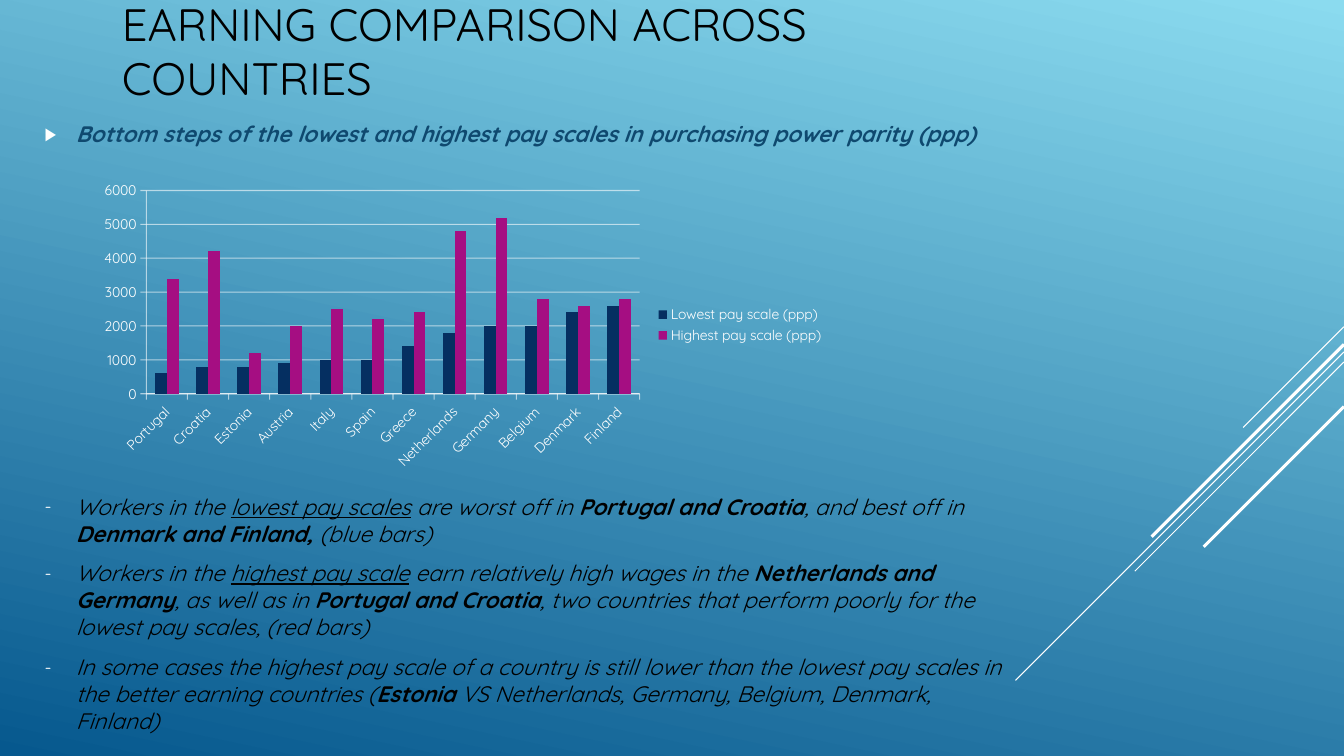
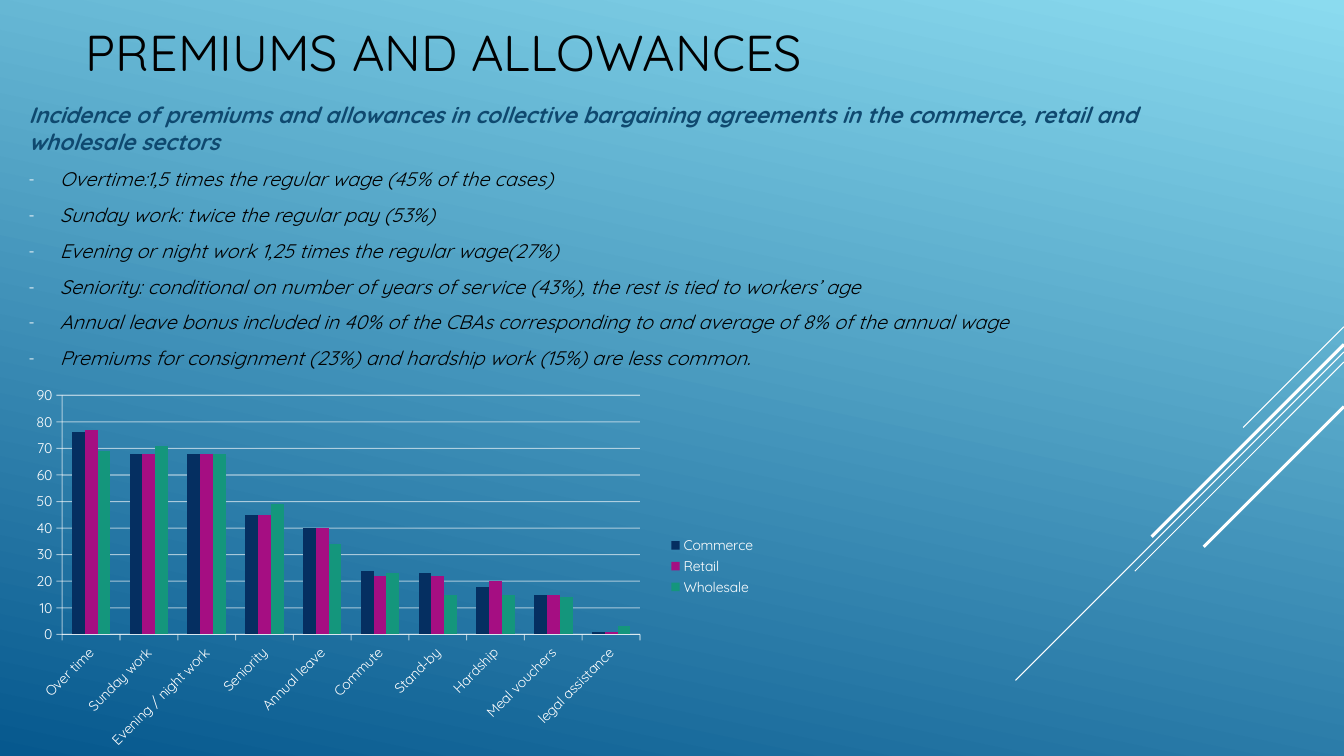
from lxml import etree
from pptx import Presentation
from pptx import util as u
from pptx.chart import data
from pptx.dml import color
from pptx.enum import chart as charts, shapes, text
from pptx.oxml.ns import qn

FONT = "Quicksand"
WHITE, BLACK, HEADING = "FFFFFF", "000000", "0F496F"
SERIES_COLORS = ["052F61", "A50E82", "14967C"]
COLUMNS, ROWS = 160, 90
CELL = u.Inches(1 / 12)
STRIPES = [(38.9, 12, 0.75), (41.9, 39.1, 0.75), (43.1, 24.9, 0.75),
           (41, 22.9, 2.25), (48.4, 16.7, 2.25)]


def rgb(value):
    return color.RGBColor.from_string(value)


def cells(*counts):
    return [round(count * CELL) for count in counts]


def child(parent, tag, **attributes):
    return etree.SubElement(parent, qn(tag), attributes)


class Deck:
    """Holds the shared style and the current slide; lengths are cells of a 160 by 90 grid."""

    def __init__(self):
        self.prs = Presentation()
        self.prs.slide_width, self.prs.slide_height = cells(COLUMNS, ROWS)
        fill = self.prs.slide_master.background.fill
        fill.gradient()
        fill.gradient_angle = 360 - 102
        for stop, position, shade in zip(fill.gradient_stops, (0, 1), ("8BDBEF", "06588E")):
            stop.position = position
            stop.color.rgb = rgb(shade)

    def new_slide(self):
        self.slide = self.prs.slides.add_slide(self.prs.slide_layouts[1])
        for row, length, width in STRIPES:
            self.stripe(row, length, width)

    def stripe(self, row, length, width):
        ends = cells(COLUMNS, row, COLUMNS - length, row + length)
        line = self.slide.shapes.add_connector(shapes.MSO_CONNECTOR.STRAIGHT, *ends)
        line.line.color.rgb = rgb(WHITE)
        line.line.width = u.Pt(width)
        child(line._element.spPr, "a:effectLst")

    def place(self, holder, box, anchor):
        holder.left, holder.top, holder.width, holder.height = cells(*box)
        frame = holder.text_frame
        frame.word_wrap = True
        frame.auto_size = text.MSO_AUTO_SIZE.NONE
        frame.vertical_anchor = anchor
        return frame

    def style(self, font, size, shade, bold=False, italic=False):
        font.name, font.size = FONT, u.Pt(size)
        font.color.rgb = rgb(shade)
        font.bold, font.italic = bold, italic

    def title(self, wording, box, size, anchor):
        frame = self.place(self.slide.shapes.title, box, anchor)
        frame.text = wording
        heading = frame.paragraphs[0]
        heading.alignment = text.PP_ALIGN.LEFT
        self.style(heading.runs[0].font, size, BLACK)

    def body(self, heading, points, box, size, heading_bullet=None, gap=None):
        frame = self.place(self.slide.placeholders[1], box, text.MSO_ANCHOR.TOP)
        frame.text = heading
        first = frame.paragraphs[0]
        self.style(first.runs[0].font, 16, HEADING, True, True)
        self.bullet(first, heading_bullet, 0)
        for index, point in enumerate(points):
            paragraph = frame.add_paragraph()
            self.emphasise(paragraph, point, size)
            before = gap if gap and index == 0 else 0.2 * size
            self.bullet(paragraph, "-", before)

    def emphasise(self, paragraph, marked, size):
        """Text between asterisks is bold, or underlined if it opens with an underscore."""
        for index, piece in enumerate(marked.split("*")):
            underlined = piece.startswith("_")
            run = paragraph.add_run()
            run.text = piece.lstrip("_")
            self.style(run.font, size, BLACK, index % 2 == 1 and not underlined, True)
            run.font.underline = underlined

    def bullet(self, paragraph, mark, before):
        paragraph.alignment = text.PP_ALIGN.LEFT
        paragraph.space_before, paragraph.space_after = u.Pt(before), u.Pt(6)
        props = paragraph._p.get_or_add_pPr()
        indent = u.Inches(0.31) if mark else 0
        props.set("marL", str(indent))
        props.set("indent", str(-indent))
        if not mark:
            child(props, "a:buNone")
            return
        child(child(props, "a:buClr"), "a:srgbClr", val=WHITE)
        child(props, "a:buSzPct", val="80000")
        child(props, "a:buFont", typeface=FONT)
        child(props, "a:buChar", char=mark)

    def columns(self, categories, series, box, plot_area, top, step):
        numbers = data.CategoryChartData(number_format="General")
        numbers.categories = categories
        for name, values in series.items():
            numbers.add_series(name, values)
        chart = self.slide.shapes.add_chart(
            charts.XL_CHART_TYPE.COLUMN_CLUSTERED, *cells(*box), numbers).chart
        chart.has_title = False
        self.style(chart.font, 10, WHITE)
        chart.has_legend = True
        chart.legend.position = charts.XL_LEGEND_POSITION.RIGHT
        chart.legend.include_in_layout = False
        self.style(chart.legend.font, 10, WHITE)
        plot = chart.plots[0]
        plot.gap_width, plot.overlap, plot.vary_by_categories = 150, 0, False
        for bars, shade in zip(plot.series, SERIES_COLORS):
            bars.format.fill.solid()
            bars.format.fill.fore_color.rgb = rgb(shade)
        self.axes(chart, top, step)
        self.plot_layout(chart, plot_area)

    def axes(self, chart, top, step):
        names, scale = chart.category_axis, chart.value_axis
        scale.minimum_scale, scale.maximum_scale, scale.major_unit = 0, top, step
        scale.has_major_gridlines = True
        for axis in (names, scale):
            axis.major_tick_mark = charts.XL_TICK_MARK.OUTSIDE
            axis.minor_tick_mark = charts.XL_TICK_MARK.NONE
            self.style(axis.tick_labels.font, 10, WHITE)
        for part in (names, scale, scale.major_gridlines):
            part.format.line.color.rgb = rgb(WHITE)
            part.format.line.width = u.Pt(0.75)
        for line in chart._chartSpace.iter(qn("a:ln")):
            for shade in line.iter(qn("a:srgbClr")):
                child(shade, "a:alpha", val="60000")
        labels = names._element.find(qn("c:txPr"))
        labels.find(qn("a:bodyPr")).set("rot", str(-45 * 60000))

    def plot_layout(self, chart, plot_area):
        area = next(chart._chartSpace.iter(qn("c:plotArea")))
        for old in area.findall(qn("c:layout")):
            area.remove(old)
        layout = child(area, "c:layout")
        area.insert(0, layout)
        manual = child(layout, "c:manualLayout")
        child(manual, "c:layoutTarget", val="inner")
        for side in "xy":
            child(manual, f"c:{side}Mode", val="edge")
        for side, share in zip("xywh", plot_area):
            child(manual, f"c:{side}", val=str(share))


def earnings(deck):
    deck.new_slide()
    deck.title("EARNING COMPARISON ACROSS COUNTRIES", (13.3, 1.3, 112, 9.4), 32.4,
               text.MSO_ANCHOR.MIDDLE)
    deck.body(
        "Bottom steps of the lowest and highest pay scales in purchasing power parity (ppp)",
        ["Workers in the *_lowest pay scales* are worst off in *Portugal and Croatia*, "
         "and best off in *Denmark and Finland, *(blue bars)",
         "Workers in the *_highest pay scale* earn relatively high wages in the "
         "*Netherlands and Germany*, as well as in *Portugal and Croatia*, two countries "
         "that perform poorly for the lowest pay scales, (red bars)",
         "In some cases the highest pay scale of a country is still lower than the lowest "
         "pay scales in the better earning countries (*Estonia* VS Netherlands, Germany, "
         "Belgium, Denmark, Finland)"],
        (4.1, 13.7, 116.9, 73.2), 16, heading_bullet="▶", gap=241)
    deck.columns(
        ["Portugal", "Croatia", "Estonia", "Austria", "Italy", "Spain", "Greece",
         "Netherlands", "Germany", "Belgium", "Denmark", "Finland"],
        {"Lowest pay scale (ppp)": [600, 800, 800, 900, 1000, 1000, 1400, 1800, 2000,
                                    2000, 2400, 2600],
         "Highest pay scale (ppp)": [3400, 4200, 1200, 2000, 2500, 2200, 2400, 4800, 5200,
                                     2800, 2600, 2800]},
        (10.3, 20.9, 89, 35.6), (0.08, 0.05, 0.66, 0.68), 6000, 1000)


def premiums(deck):
    deck.new_slide()
    deck.title("PREMIUMS AND ALLOWANCES", (9, 1.9, 112, 19.8), 36, text.MSO_ANCHOR.TOP)
    deck.body(
        "Incidence of premiums and allowances in collective bargaining agreements in the "
        "commerce, retail and wholesale sectors",
        ["Overtime:1,5 times the regular wage (45% of the cases)",
         "Sunday work: twice the regular pay (53%)",
         "Evening or night work 1,25 times the regular wage(27%)",
         "Seniority: conditional on number of years of service (43%), the rest is tied to "
         "workers’ age",
         "Annual leave bonus included in 40% of the CBAs corresponding to and average of 8% "
         "of the annual wage",
         "Premiums for consignment (23%) and hardship work (15%) are less common."],
        (2.2, 11.4, 145, 78.6), 14)
    deck.columns(
        ["Over time", "Sunday work", "Evening / night work", "Seniority", "Annual leave",
         "Commute", "Stand-by", "Hardship", "Meal vouchers", "legal assistance"],
        {"Commerce": [76, 68, 68, 45, 40, 24, 23, 18, 15, 1],
         "Retail": [77, 68, 68, 45, 40, 22, 22, 20, 15, 1],
         "Wholesale": [69, 71, 68, 49, 34, 23, 15, 15, 14, 3]},
        (3, 44.8, 88.2, 45.2), (0.05, 0.05, 0.78, 0.63), 90, 10)


def main():
    deck = Deck()
    earnings(deck)
    premiums(deck)
    deck.prs.save("out.pptx")


if __name__ == "__main__":
    main()
